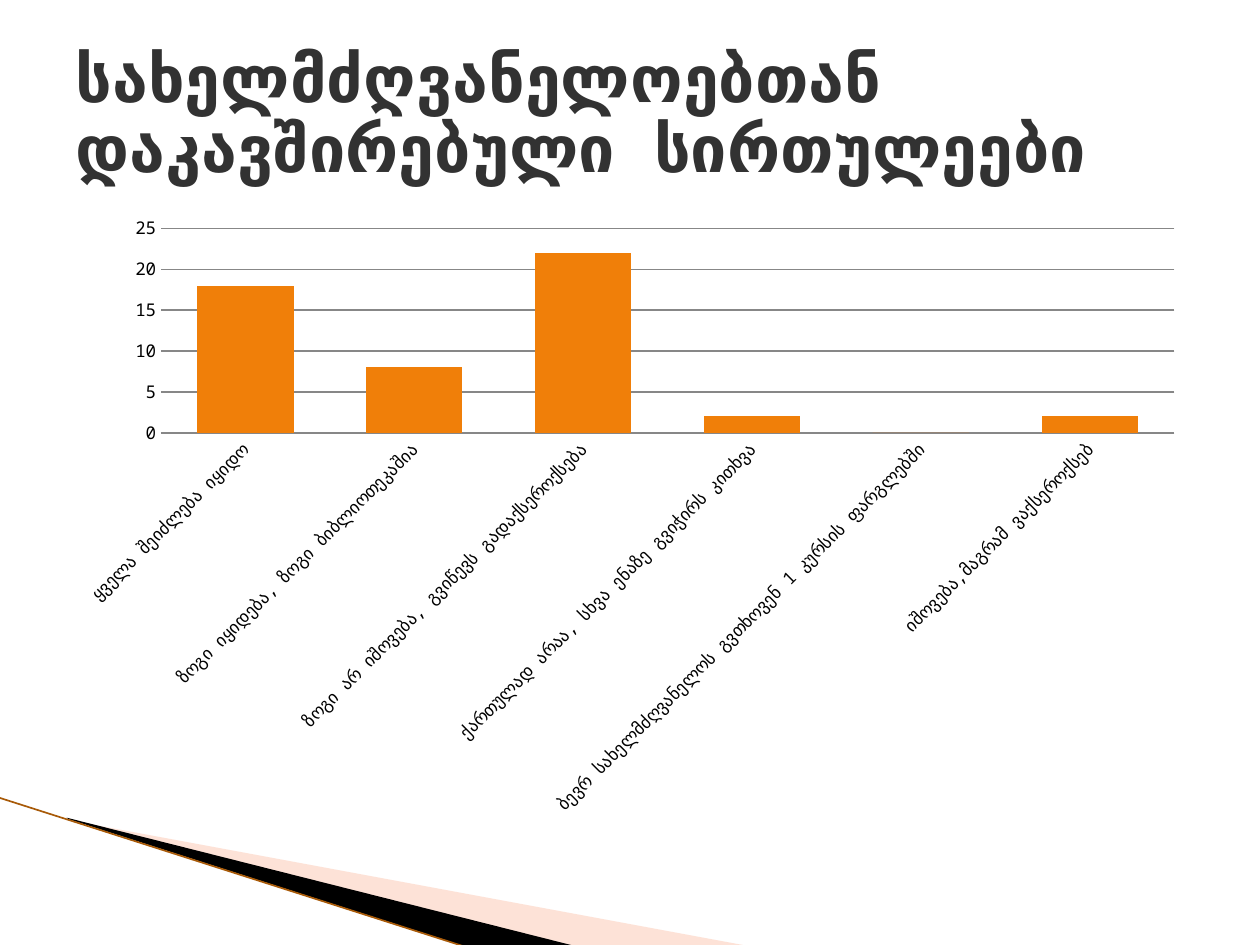
from lxml import etree
from pptx import Presentation
from pptx.chart.data import CategoryChartData
from pptx.dml.color import RGBColor
from pptx.enum.chart import XL_CHART_TYPE, XL_TICK_MARK
from pptx.enum.shapes import MSO_CONNECTOR
from pptx.enum.text import MSO_ANCHOR, MSO_AUTO_SIZE, PP_ALIGN
from pptx.oxml.ns import qn
from pptx.util import Inches, Pt

COLUMNS = XL_CHART_TYPE.COLUMN_CLUSTERED
NO_TICK = XL_TICK_MARK.NONE
STRAIGHT = MSO_CONNECTOR.STRAIGHT
MIDDLE = MSO_ANCHOR.MIDDLE
NO_FIT = MSO_AUTO_SIZE.NONE
LEFT = PP_ALIGN.LEFT

FONT = "Noto Sans Mono"
COLORS = {
    "title": "323232",
    "text": "000000",
    "bar": "F07F09",
    "grid": "878787",
    "peach": "FCB79B",
    "black": "000000",
    "edge": "A85A08",
}


def color(name):
    return RGBColor.from_string(COLORS[name])


def write(frame, text, size, fill, bold=False, align=LEFT, spacing=1.0):
    para = frame.paragraphs[0]
    para.alignment = align
    para.line_spacing = spacing
    span = para.add_run()
    span.text = text
    span.font.name = FONT
    span.font.size = Pt(size)
    span.font.bold = bold
    span.font.color.rgb = color(fill)


deck = Presentation()
deck.slide_width, deck.slide_height = Inches(10), Inches(7.5)
page = deck.slides.add_slide(deck.slide_layouts[5])

wedges = [
    ("peach", 40, [(0.55, 6.51), (5.95, 7.51), (4.56, 7.51), (0.55, 6.5)]),
    ("black", 100, [(0.53, 6.49), (4.57, 7.51), (3.72, 7.52), (0.54, 6.5)]),
]
for name, opacity, corners in wedges:
    points = [(Inches(x), Inches(y)) for x, y in corners]
    builder = page.shapes.build_freeform(*points[0])
    builder.add_line_segments(points[1:])
    wedge = builder.convert_to_shape()
    wedge.shadow.inherit = False
    wedge.fill.solid()
    wedge.fill.fore_color.rgb = color(name)
    wedge.line.fill.background()
    if opacity < 100:
        shade = wedge._element.spPr.find(".//" + qn("a:srgbClr"))
        etree.SubElement(shade, qn("a:alpha")).set("val", str(opacity * 1000))

edge = page.shapes.add_connector(
    STRAIGHT, Inches(-0.01), Inches(6.33), Inches(3.71), Inches(7.52))
edge.line.color.rgb = color("edge")
edge.line.width = Pt(0.95)
etree.SubElement(edge._element.spPr, qn("a:effectLst"))

difficulties = {
    "ყველა შეიძლება იყიდო": 18,
    "ზოგი იყიდება, ზოგი ბიბლიოთეკაშია": 8,
    "ზოგი არ იშოვება, გვიწევს გადაქსეროქსება": 22,
    "ქართულად არაა, სხვა ენაზე გვიჭირს კითხვა": 2,
    "ბევრ სახელმძღვანელოს გვთხოვენ 1 კურსის ფარგლებში": 0,
    "იშოვება,მაგრამ ვაქსეროქსებ": 2,
}
data = CategoryChartData()
data.categories = list(difficulties)
data.add_series("Series 1", list(difficulties.values()))
chart = page.shapes.add_chart(
    COLUMNS, Inches(0.5), Inches(1.62), Inches(9), Inches(4.95), data).chart
chart.has_legend = False
chart.has_title = False
chart.font.name = FONT
chart.font.size = Pt(10)
chart.font.color.rgb = color("text")

plot = chart.plots[0]
plot.gap_width = 75
plot.vary_by_categories = False
bars = plot.series[0]
bars.format.fill.solid()
bars.format.fill.fore_color.rgb = color("bar")

categories, values = chart.category_axis, chart.value_axis
for axis in (categories, values):
    axis.major_tick_mark = NO_TICK
    axis.minor_tick_mark = NO_TICK
    axis.tick_labels.font.size = Pt(10)
categories.format.line.color.rgb = color("grid")
label_body = categories._element.find(qn("c:txPr")).find(qn("a:bodyPr"))
label_body.set("rot", "-2700000")
label_body.set("vert", "horz")
values.minimum_scale, values.maximum_scale, values.major_unit = 0, 25, 5
values.format.line.fill.background()
values.has_major_gridlines = True
values.major_gridlines.format.line.color.rgb = color("grid")
values.major_gridlines.format.line.width = Pt(0.75)

title = page.shapes.title
title.left, title.top = Inches(0.5), Inches(0.3)
title.width, title.height = Inches(9), Inches(1.25)
title.text_frame.word_wrap = True
title.text_frame.auto_size = NO_FIT
title.text_frame.vertical_anchor = MIDDLE
write(title.text_frame, "სახელმძღვანელოებთან დაკავშირებული სირთულეები",
      size=36.9, fill="title", bold=True, spacing=0.9)

deck.save("out.pptx")
